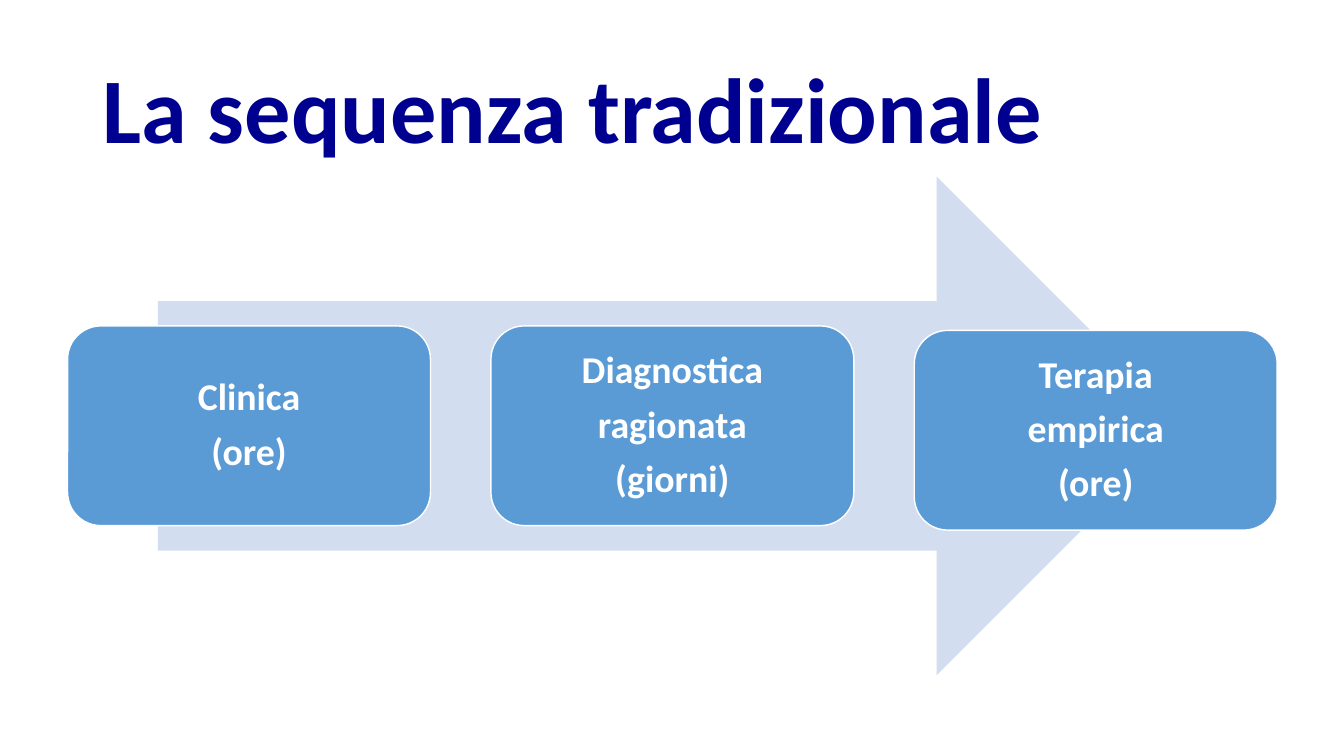
"""Build the slide on the traditional clinical sequence."""
from pptx import Presentation
from pptx.dml.color import RGBColor
from pptx.enum import shapes, text
from pptx.util import Pt

COLORS = {"title": "000090", "arrow": "D2DEEF", "step": "5B9BD5", "white": "FFFFFF"}
STEPS = [
    (["Clinica", "(ore)"], 232.8),
    (["Diagnostica", "ragionata", "(giorni)"], 232.8),
    (["Terapia", "empirica", "(ore)"], 236),
]
FIRST_LEFT, STEP_PITCH = 48.3, 302.4
STEP_WIDTH, STEP_HEIGHT = 259.2, 142.6


def style_font(paragraph, size, color):
    font = paragraph.font
    font.name, font.size, font.bold = "Calibri", Pt(size), True
    font.color.rgb = RGBColor.from_string(COLORS[color])
    paragraph.line_spacing = 0.9


def add_block(kind, left, top, width, height, color):
    block = slide.shapes.add_shape(kind, Pt(left), Pt(top), Pt(width), Pt(height))
    block.shadow.inherit = False
    block.fill.solid()
    block.fill.fore_color.rgb = RGBColor.from_string(COLORS[color])
    block.line.fill.background()
    return block


deck = Presentation()
deck.slide_width, deck.slide_height = Pt(960), Pt(540)
slide = deck.slides.add_slide(deck.slide_layouts[5])

heading = slide.shapes.title
heading.left, heading.top, heading.width, heading.height = Pt(66), Pt(28.8), Pt(828), Pt(104.4)
heading.text_frame.text = "La sequenza tradizionale"
heading.text_frame.auto_size = text.MSO_AUTO_SIZE.NONE
heading.text_frame.vertical_anchor = text.MSO_ANCHOR.MIDDLE
heading_line = heading.text_frame.paragraphs[0]
heading_line.alignment = text.PP_ALIGN.LEFT
style_font(heading_line, 66, "title")

add_block(shapes.MSO_SHAPE.RIGHT_ARROW, 112.8, 126, 734.4, 356.4, "arrow")

for index, (lines, top) in enumerate(STEPS):
    step = add_block(shapes.MSO_SHAPE.ROUNDED_RECTANGLE, FIRST_LEFT + index * STEP_PITCH, top,
                     STEP_WIDTH, STEP_HEIGHT, "step")
    step.line.color.rgb = RGBColor.from_string(COLORS["white"])
    step.line.width = Pt(1)
    label = step.text_frame
    label.word_wrap = True
    label.vertical_anchor = text.MSO_ANCHOR.MIDDLE
    label.margin_left = label.margin_right = label.margin_top = label.margin_bottom = Pt(8)
    label.text = "\n".join(lines)
    for line in label.paragraphs:
        line.alignment = text.PP_ALIGN.CENTER
        line.space_after = Pt(9.4)
        style_font(line, 27, "white")

deck.save("out.pptx")
